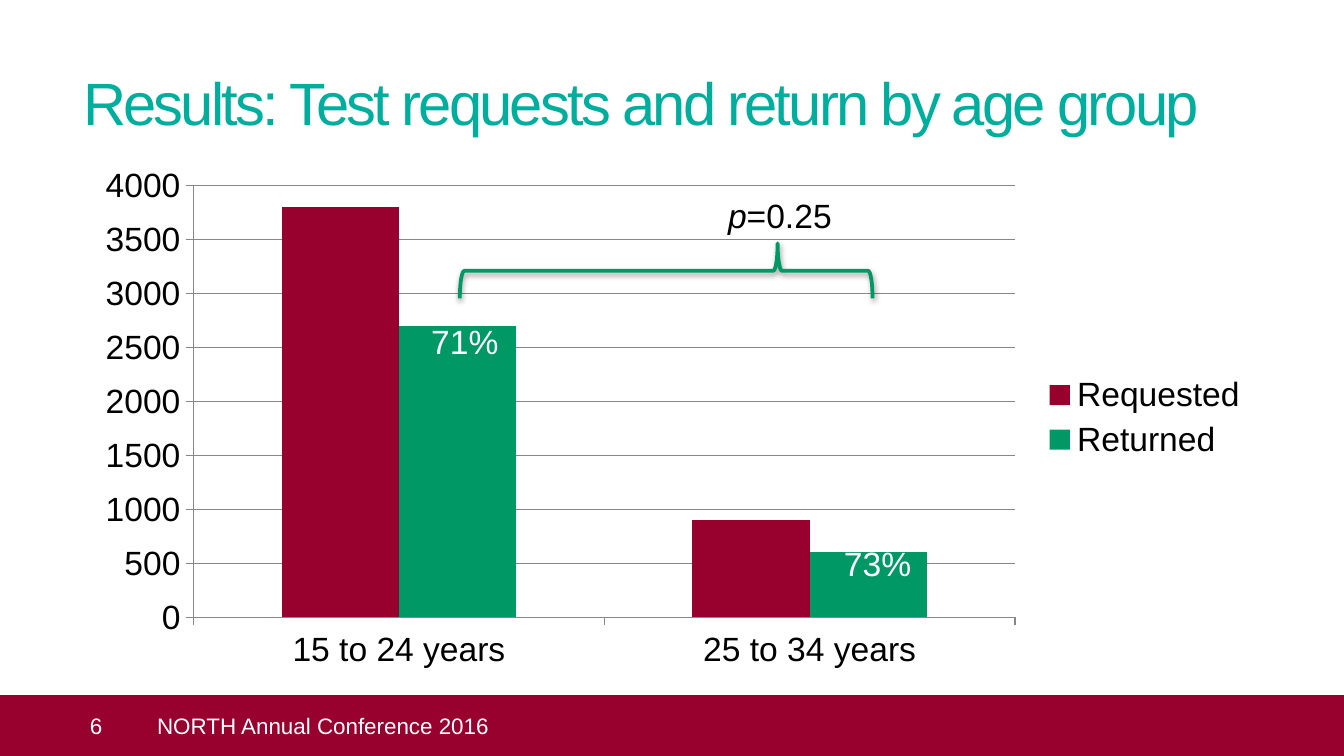
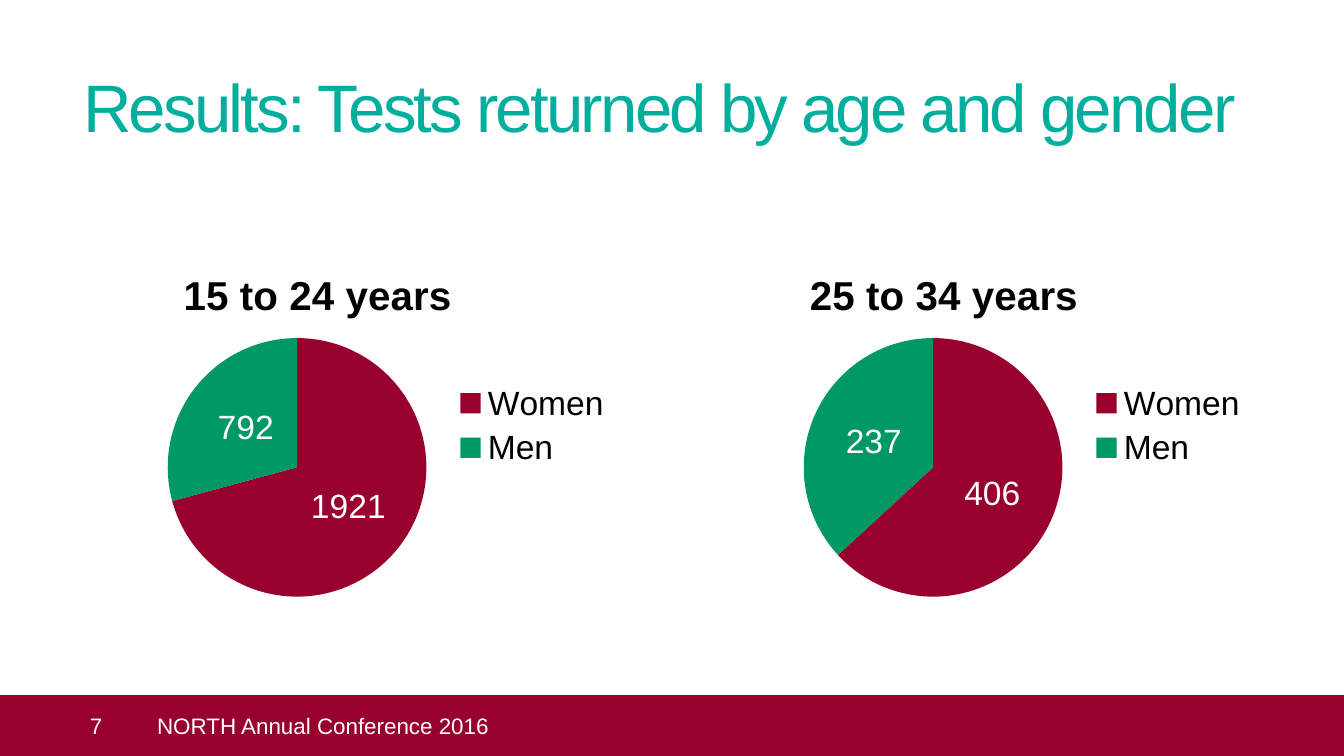
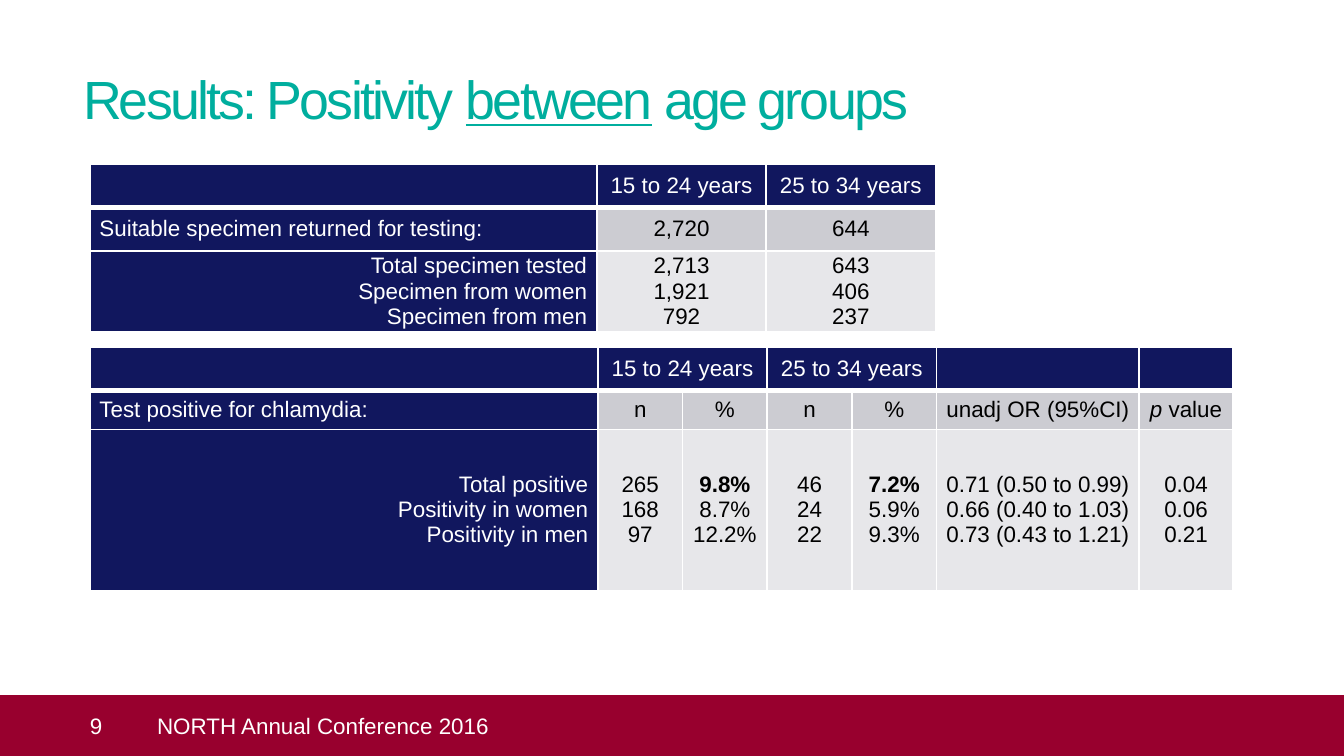
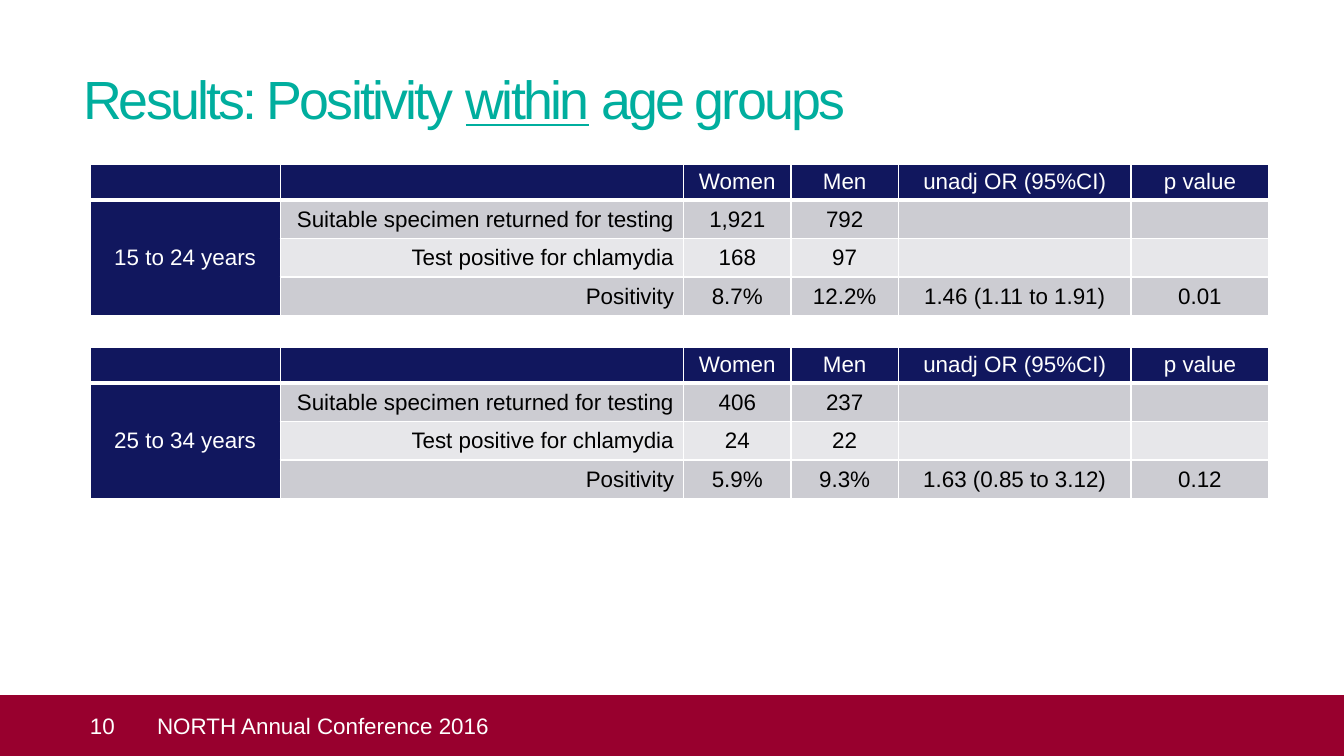
from lxml.etree import SubElement
from pptx import Presentation
from pptx.chart.data import CategoryChartData
from pptx.dml.color import RGBColor
from pptx.enum.chart import XL_CHART_TYPE as ChartType
from pptx.enum.chart import XL_LABEL_POSITION as LabelAt
from pptx.enum.chart import XL_LEGEND_POSITION as LegendAt
from pptx.enum.chart import XL_TICK_MARK as Tick
from pptx.enum.shapes import MSO_SHAPE as Preset
from pptx.enum.text import MSO_ANCHOR as Anchor
from pptx.enum.text import MSO_AUTO_SIZE as AutoSize
from pptx.enum.text import PP_ALIGN as Align
from pptx.oxml import parse_xml
from pptx.oxml.ns import nsdecls, qn
from pptx.util import Cm, Pt

# ---- Shared look ----
COLORS = {
    "teal": "00AE9E", "crimson": "98002E", "green": "009966", "navy": "11175E",
    "white": "FFFFFF", "black": "000000", "axis": "878787",
    "stripe_dark": "CCCCD2", "stripe_light": "E7E7EA",
}
FONT = "Arial"
SLIDE_SIZE = (25.4, 14.29)
TITLE_BOX = (1.57, 1.14, 22.9, 1.35)
BAND = (0, 13.14, 25.4, 1.15)
FOOTER_BOX = (2.49, 13.14, 22.4, 1.15)
FOOTER = "NORTH Annual Conference 2016"

# ---- Content: lengths in centimetres ----
# A line is a string or a list of spans; a span is a string or (text, format).
UNDERLINE, ITALIC, BOLD = {"underline": True}, {"italic": True}, {"bold": True}
AGES = ["15 to 24 years", "25 to 34 years"]
SERIES_COLORS = ["crimson", "green"]

REQUESTS = {
    "at": (1.55, 2.95, 22.3, 9.88),
    "series": {"Requested": (3800, 900), "Returned": (2700, 600)},
}
CHART_LABELS = [
    ((7.9, 5.94, 1.8, 1.02), "71%", "white"),
    ((15.7, 10.13, 1.8, 1.02), "73%", "white"),
    ((13.51, 3.56, 2.49, 1.02), [("p", ITALIC), "=0.25"], "black"),
]
BRACE = {"at": (12.07, 1.22, 1.04, 7.8), "adjust": (0.08, 0.23)}

PIE_SIZE = (9.14, 7.19)
PIE_PLOT = {"x": 0.05, "y": 0.27, "w": 0.54, "h": 0.68}
PIES = [
    {"at": (2.69, 4.45), "title_x": 0.07, "counts": (1921, 792)},
    {"at": (14.71, 4.45), "title_x": 0.05, "counts": (406, 237)},
]

SPECIMENS = {
    "at": (1.7, 3.1), "cols": [9.58, 3.2, 3.2], "rows": [0.82, 0.82, 1.53],
    "merge": [], "left": [(1, 0)], "right": [(2, 0)],
    "cells": [
        ["", *AGES],
        ["Suitable specimen returned for testing:", "2,720", "644"],
        [["Total specimen tested", "Specimen from women", "Specimen from men"],
         ["2,713", "1,921", "792"], ["643", "406", "237"]],
    ],
}
POSITIVES = {
    "at": (1.7, 6.56), "cols": [9.6, 1.6, 1.6, 1.6, 1.6, 3.83, 1.77],
    "rows": [0.82, 0.74, 3.04],
    "merge": [(0, 1, 0, 2), (0, 3, 0, 4)], "left": [(1, 0)], "right": [(2, 0)],
    "cells": [
        ["", AGES[0], "", AGES[1], "", "", ""],
        ["Test positive for chlamydia:", "n", "%", "n", "%",
         "unadj OR (95%CI)", [[("p", ITALIC), " value"]]],
        [["Total positive", "Positivity in women", "Positivity in men"],
         ["265", "168", "97"], [[("9.8%", BOLD)], "8.7%", "12.2%"],
         ["46", "24", "22"], [[("7.2%", BOLD)], "5.9%", "9.3%"],
         ["0.71 (0.50 to 0.99)", "0.66 (0.40 to 1.03)", "0.73 (0.43 to 1.21)"],
         ["0.04", "0.06", "0.21"]],
    ],
}


def within_age(age, top, returned, positive, positivity):
    """Table of women and men in one age group."""
    return {
        "at": (1.7, top), "cols": [3.6, 7.62, 2.03, 2.03, 4.4, 2.6],
        "rows": [0.68, 0.73, 0.73, 0.73],
        "merge": [(1, 0, 3, 0)], "left": [], "right": [(1, 1), (2, 1), (3, 1)],
        "cells": [
            ["", "", "Women", "Men", "unadj OR (95%CI)", "p value"],
            [age, "Suitable specimen returned for testing", *returned, "", ""],
            ["", "Test positive for chlamydia", *positive, "", ""],
            ["", "Positivity", *positivity],
        ],
    }


WITHIN = [
    within_age(AGES[0], 3.1, ("1,921", "792"), ("168", "97"),
               ("8.7%", "12.2%", "1.46 (1.11 to 1.91)", "0.01")),
    within_age(AGES[1], 6.56, ("406", "237"), ("24", "22"),
               ("5.9%", "9.3%", "1.63 (0.85 to 3.12)", "0.12")),
]


# ---- Text and shape helpers ----
def color(name):
    return RGBColor.from_string(COLORS[name])


def cms(values):
    return [Cm(value) for value in values]


def assign(target, values):
    for name, value in values.items():
        setattr(target, name, value)


def style_font(font, size, tint, **formats):
    assign(font, {"name": FONT, "size": Pt(size), **formats})
    font.color.rgb = color(tint)


def write(frame, lines, size, tint, align=Align.LEFT, spacing=None):
    for index, line in enumerate(lines):
        para = frame.add_paragraph() if index else frame.paragraphs[0]
        para.alignment = align
        for piece in [line] if isinstance(line, str) else line:
            text, formats = (piece, {}) if isinstance(piece, str) else piece
            span = para.add_run()
            span.text = text
            style_font(span.font, size, tint, **formats)
            if spacing:
                span.font._rPr.set("spc", str(spacing))


def set_frame(frame, margins, **formats):
    sides = ("margin_left", "margin_top", "margin_right", "margin_bottom")
    assign(frame, {**dict(zip(sides, cms(margins))), **formats})


def add_label(page, at, line, tint):
    frame = page.shapes.add_textbox(*cms(at)).text_frame
    set_frame(frame, (0.25, 0.13, 0.25, 0.13), word_wrap=False,
              auto_size=AutoSize.SHAPE_TO_FIT_TEXT)
    write(frame, [line], 18, tint)


def add_brace(page, at, adjust):
    brace = page.shapes.add_shape(Preset.LEFT_BRACE, *cms(at))
    brace.rotation = 90
    for index, value in enumerate(adjust):
        brace.adjustments[index] = value
    brace.fill.background()
    brace.line.color.rgb = color("green")
    brace.line.width = Pt(2)
    brace._element.spPr.append(parse_xml(
        f'<a:effectLst {nsdecls("a")}><a:outerShdw blurRad="{Pt(3.1)}" dist="{Pt(1.6)}" '
        f'dir="5400000" rotWithShape="0"><a:srgbClr val="{COLORS["black"]}">'
        '<a:alpha val="38000"/></a:srgbClr></a:outerShdw></a:effectLst>'))


def add_page(deck, number, title, title_size):
    page = deck.slides.add_slide(deck.slide_layouts[6])
    frame = page.shapes.add_textbox(*cms(TITLE_BOX)).text_frame
    set_frame(frame, (0, 0.1, 0, 0), word_wrap=True)
    write(frame, [title], title_size, "teal", spacing=-150)

    band = page.shapes.add_shape(Preset.RECTANGLE, *cms(BAND))
    band.shadow.inherit = False
    band.fill.solid()
    band.fill.fore_color.rgb = color("crimson")
    band.line.fill.background()
    footer = page.shapes.add_textbox(*cms(FOOTER_BOX))
    for box, indent, text in ((band, 1.7, str(number)), (footer, 0.48, FOOTER)):
        set_frame(box.text_frame, (indent, 0, 0, 0), word_wrap=True,
                  vertical_anchor=Anchor.MIDDLE)
        write(box.text_frame, [text], 12, "white")
    return page


# ---- Chart helpers ----
def place_part(parent, index, fractions, inner=False):
    """Give a chart part a manual layout in fractions of the chart."""
    for old in parent.findall(qn("c:layout")):
        parent.remove(old)
    layout = parse_xml(f'<c:layout {nsdecls("c")}><c:manualLayout/></c:layout>')
    manual = layout[0]
    if inner:
        SubElement(manual, qn("c:layoutTarget"), val="inner")
    for side in "xy":
        SubElement(manual, qn(f"c:{side}Mode"), val="edge")
    for side, value in fractions.items():
        SubElement(manual, qn(f"c:{side}"), val=str(value))
    parent.insert(index, layout)


def add_chart(page, kind, at, categories, series):
    data = CategoryChartData()
    data.categories = categories
    for name, values in series.items():
        data.add_series(name, values)
    chart = page.shapes.add_chart(kind, *cms(at), data).chart
    style_font(chart.font, 18, "black")
    chart.has_legend = True
    assign(chart.legend, {"position": LegendAt.RIGHT, "include_in_layout": False})
    return chart


def paint(parts):
    for part, name in zip(parts, SERIES_COLORS):
        part.format.fill.solid()
        part.format.fill.fore_color.rgb = color(name)


def add_columns(page, at, series):
    chart = add_chart(page, ChartType.COLUMN_CLUSTERED, at, AGES, series)
    chart.has_title = False
    plot = chart.plots[0]
    assign(plot, {"gap_width": 150, "overlap": 0, "vary_by_categories": False})
    paint(plot.series)
    values = chart.value_axis
    assign(values, {"minimum_scale": 0, "maximum_scale": 4000, "major_unit": 500,
                    "has_major_gridlines": True})
    for axis in (chart.category_axis, values):
        assign(axis, {"major_tick_mark": Tick.OUTSIDE, "minor_tick_mark": Tick.NONE})
    for part in (chart.category_axis, values, values.major_gridlines):
        part.format.line.color.rgb = color("axis")
        part.format.line.width = Pt(0.75)


def add_pie(page, age, at, title_x, counts):
    chart = add_chart(page, ChartType.PIE, (*at, *PIE_SIZE), ["Women", "Men"], {age: counts})
    chart.has_title = True
    title = chart.chart_title
    write(title.text_frame, [[(age, BOLD)]], 21.6, "black", Align.CENTER)
    place_part(title._element, 1, {"x": title_x, "y": 0.07})
    place_part(chart._chartSpace.chart.plotArea, 0, PIE_PLOT, inner=True)
    plot = chart.plots[0]
    plot.vary_by_categories = True
    paint([plot.series[0].points[index] for index in range(len(counts))])
    plot.has_data_labels = True
    labels = plot.data_labels
    assign(labels, {"show_value": True, "show_percentage": False, "position": LabelAt.CENTER})
    style_font(labels.font, 18, "white")


# ---- Table helpers ----
def set_borders(cell, bottom):
    props = cell._tc.get_or_add_tcPr()
    for index, (side, width) in enumerate(zip("LRTB", (1, 1, 1, bottom))):
        props.insert(index, parse_xml(
            f'<a:ln{side} {nsdecls("a")} w="{Pt(width)}"><a:solidFill>'
            f'<a:srgbClr val="{COLORS["white"]}"/></a:solidFill></a:ln{side}>'))


def add_table(page, at, cols, rows, merge, left, right, cells):
    table = page.shapes.add_table(len(rows), len(cols), *cms((*at, sum(cols), sum(rows)))).table
    for column, width in zip(table.columns, cols):
        column.width = Cm(width)
    for row, height in zip(table.rows, rows):
        row.height = Cm(height)
    for r, line in enumerate(cells):
        for c, content in enumerate(line):
            cell = table.cell(r, c)
            heading = r == 0 or c == 0
            stripe = "stripe_dark" if r % 2 else "stripe_light"
            cell.fill.solid()
            cell.fill.fore_color.rgb = color("navy" if heading else stripe)
            set_borders(cell, 1 if r else 3)
            set_frame(cell, (0.18, 0, 0.18, 0), vertical_anchor=Anchor.MIDDLE)
            align = (Align.LEFT if (r, c) in left
                     else Align.RIGHT if (r, c) in right else Align.CENTER)
            if content:
                lines = [content] if isinstance(content, str) else content
                write(cell.text_frame, lines, 12, "white" if heading else "black", align)
            else:
                SubElement(cell.text_frame.paragraphs[0]._p, qn("a:endParaRPr"), sz="1200")
    for top, first, bottom, last in merge:
        table.cell(top, first).merge(table.cell(bottom, last))


# ---- Slides ----
def main():
    deck = Presentation()
    deck.slide_width, deck.slide_height = cms(SLIDE_SIZE)

    page = add_page(deck, 6, "Results: Test requests and return by age group", 32)
    add_columns(page, **REQUESTS)
    for label in CHART_LABELS:
        add_label(page, *label)
    add_brace(page, **BRACE)

    page = add_page(deck, 7, "Results: Tests returned by age and gender", 36)
    for age, pie in zip(AGES, PIES):
        add_pie(page, age, **pie)

    table_pages = [(9, "between", [POSITIVES, SPECIMENS]), (10, "within", WITHIN)]
    for number, word, tables in table_pages:
        title = ["Results: Positivity ", (word, UNDERLINE), " age groups"]
        page = add_page(deck, number, title, 28.8)
        for table in tables:
            add_table(page, **table)

    deck.save("out.pptx")


if __name__ == "__main__":
    main()
